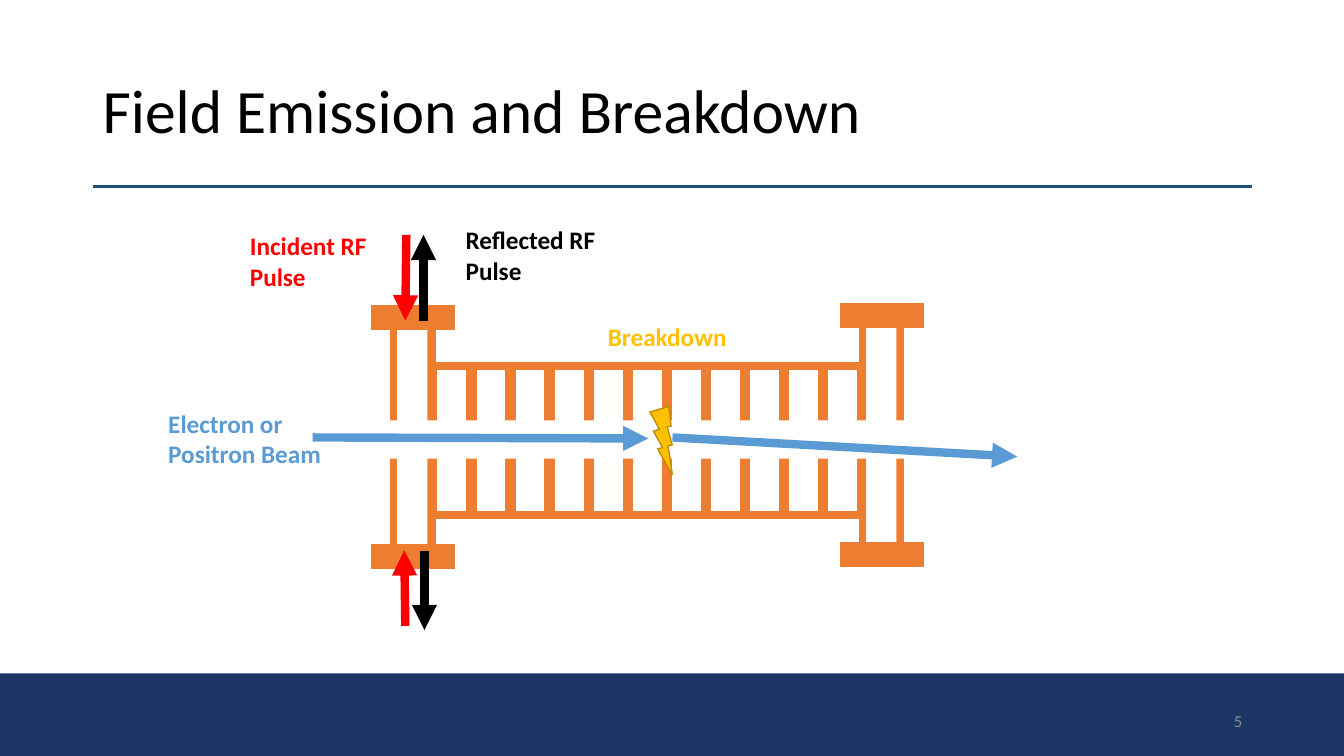
from dataclasses import dataclass

from lxml import etree
from pptx import Presentation
from pptx.dml.color import RGBColor
from pptx.enum.shapes import MSO_CONNECTOR, MSO_SHAPE
from pptx.enum.text import MSO_ANCHOR, MSO_AUTO_SIZE, PP_ALIGN
from pptx.oxml.ns import qn
from pptx.util import Emu, Pt

RECT = MSO_SHAPE.RECTANGLE
BOLT = MSO_SHAPE.LIGHTNING_BOLT
STRAIGHT = MSO_CONNECTOR.STRAIGHT
TOP, MIDDLE = MSO_ANCHOR.TOP, MSO_ANCHOR.MIDDLE
LEFT, RIGHT = PP_ALIGN.LEFT, PP_ALIGN.RIGHT
NO_FIT = MSO_AUTO_SIZE.NONE

PX = 9144  # 100 px to the inch


@dataclass(frozen=True)
class Theme:
    font: str = "Calibri"
    white: str = "FFFFFF"
    black: str = "000000"
    navy: str = "1B3665"
    rule: str = "1F4E79"
    copper: str = "ED7D31"
    beam: str = "5B9BD5"
    red: str = "FF0000"
    gold: str = "FFC000"
    edge: str = "BD8E00"
    grey: str = "8C8C8C"
    title: int = 44
    label: int = 18
    small: int = 12
    thick: int = 6


THEME = Theme()


def px(*nums):
    return [Emu(round(n * PX)) for n in nums]


def rgb(code):
    return RGBColor.from_string(code)


def add_box(shapes, box, fill, line=None, width=THEME.thick, kind=RECT):
    shape = shapes.add_shape(kind, *px(*box))
    shape.shadow.inherit = False
    shape.fill.solid()
    shape.fill.fore_color.rgb = rgb(fill)
    if line:
        shape.line.color.rgb = rgb(line)
        shape.line.width = Pt(width)
        miter = etree.SubElement(shape.line._get_or_add_ln(), qn("a:miter"))
        miter.set("lim", "800000")
    else:
        shape.line.fill.background()
    return shape


def add_line(shapes, ends, color, width=THEME.thick, arrow=True):
    line = shapes.add_connector(STRAIGHT, *px(*ends))
    line.line.color.rgb = rgb(color)
    line.line.width = Pt(width)
    if arrow:
        tail = etree.SubElement(line.line._get_or_add_ln(), qn("a:tailEnd"))
        tail.set("type", "triangle")
    etree.SubElement(line._element.spPr, qn("a:effectLst"))


def add_text(shapes, box, text, color, size=THEME.label, bold=True,
             anchor=TOP, align=LEFT, space=1.0):
    frame = shapes.add_textbox(*px(*box)).text_frame
    frame.word_wrap = True
    frame.auto_size = NO_FIT
    frame.vertical_anchor = anchor
    para = frame.paragraphs[0]
    para.alignment = align
    para.line_spacing = space
    run = para.add_run()
    run.text = text
    run.font.name = THEME.font
    run.font.size = Pt(size)
    run.font.bold = bold
    run.font.color.rgb = rgb(color)


def add_cavity(shapes):
    group = shapes.add_group_shape().shapes
    # Row of cells, with a taller port at each end
    first, last, count = 391, 856, 13
    pitch = (last - first) / (count - 1)
    for i in range(count):
        top, high = (327, 217) if i in (0, count - 1) else (363, 148)
        add_box(group, (first + i * pitch, top, 37, high),
                THEME.white, THEME.copper)
    # Beam pipe and port openings
    add_box(group, (370, 417, 546, 38), THEME.white)
    for left in (394, 859):
        add_box(group, (left, 310, 30, 252), THEME.white)
    # Flanges
    for left, top in ((372, 307), (837, 305)):
        for drop in (0, 237):
            add_box(group, (left, top + drop, 75, 16),
                    THEME.copper, THEME.copper)


def main():
    deck = Presentation()
    deck.slide_width, deck.slide_height = px(1333, 750)
    shapes = deck.slides.add_slide(deck.slide_layouts[6]).shapes

    # Footer band, title and rule
    add_box(shapes, (0, 668, 1333, 82), THEME.navy)
    add_line(shapes, (92, 185, 1242, 185), THEME.rule, 2.25, False)
    add_text(shapes, (92, 40, 1150, 145), "Field Emission and Breakdown",
             THEME.black, THEME.title, False, MIDDLE, space=0.9)
    add_text(shapes, (942, 695, 300, 40), "5", THEME.grey, THEME.small,
             False, MIDDLE, RIGHT)

    add_cavity(shapes)

    # Incoming beam, pulses going in, and the breakdown spark
    add_line(shapes, (310, 434, 643, 435), THEME.beam)
    add_line(shapes, (403, 233, 402, 318), THEME.red)
    add_line(shapes, (402, 621, 401, 546), THEME.red)
    spark = add_box(shapes, (637, 403, 41, 63), THEME.gold, THEME.edge,
                    1, BOLT)
    spark.rotation = 18.7

    # Deflected beam and reflected pulses
    add_line(shapes, (667, 434, 1009, 453), THEME.beam)
    add_line(shapes, (420, 318, 420, 233), THEME.black)
    add_line(shapes, (421, 547, 421, 625), THEME.black)

    # Labels
    for box, text, color in (
        ((157, 400, 199, 71), "Electron or Positron Beam", THEME.beam),
        ((238, 224, 182, 71), "Incident RF Pulse", THEME.red),
        ((593, 314, 145, 40), "Breakdown", THEME.gold),
        ((452, 218, 188, 71), "Reflected RF Pulse", THEME.black),
    ):
        add_text(shapes, box, text, color)

    deck.save("out.pptx")


if __name__ == "__main__":
    main()
